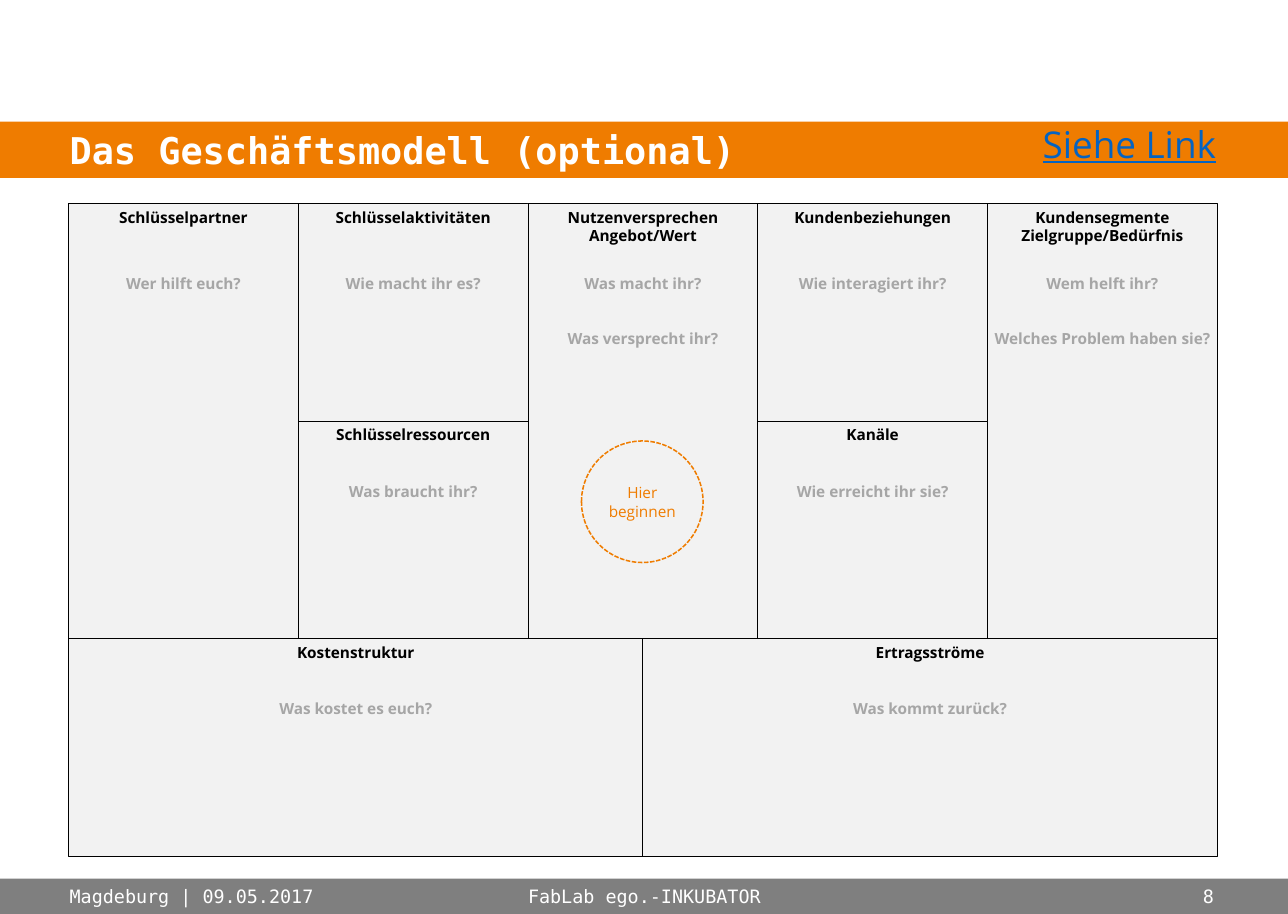
from dataclasses import dataclass

from pptx import Presentation
from pptx.dml.color import RGBColor
from pptx.enum.dml import MSO_LINE
from pptx.enum.shapes import MSO_SHAPE
from pptx.enum.text import MSO_ANCHOR, PP_ALIGN
from pptx.util import Inches, Pt

RECT, OVAL = MSO_SHAPE.RECTANGLE, MSO_SHAPE.OVAL
LEFT, MID, RIGHT = PP_ALIGN.LEFT, PP_ALIGN.CENTER, PP_ALIGN.RIGHT
TOP, CENTER = MSO_ANCHOR.TOP, MSO_ANCHOR.MIDDLE
DASH = MSO_LINE.SQUARE_DOT

MONO, SANS = "DejaVu Sans Mono", "Open Sans"
ORANGE, WHITE, BLACK, BLUE = "EF7C00", "FFFFFF", "000000", "0563C1"
PALE, SILVER, GREY = "F2F2F2", "A6A6A6", "7F7F7F"

WIDE, HIGH = 11.65, 8.27
EDGE, HEAD = 0.62, 1.84
COL, ROW = 2.078, 1.97
BAR, FOOT = 7.95, 0.32


@dataclass(frozen=True)
class Style:
    """Look of a text."""
    size: float
    color: str
    font: str = SANS
    bold: bool = False
    line: bool = False
    align: PP_ALIGN = MID
    anchor: MSO_ANCHOR = TOP
    pad: float = 0
    pitch: float | None = None
    gap: float = 0


@dataclass(frozen=True)
class Cell:
    """Field of the canvas, measured in columns and rows."""
    col: float
    row: int
    wide: float
    high: int
    name: str
    hint: str


@dataclass(frozen=True)
class Note:
    """Text in the footer bar."""
    left: float
    wide: float
    text: str
    align: PP_ALIGN


CELLS = [
    Cell(0, 0, 1, 2, "Schlüsselpartner", "Wer hilft euch?"),
    Cell(1, 0, 1, 1, "Schlüsselaktivitäten", "Wie macht ihr es?"),
    Cell(2, 0, 1, 2, "Nutzenversprechen\nAngebot/Wert",
         "Was macht ihr?\nWas versprecht ihr?"),
    Cell(3, 0, 1, 1, "Kundenbeziehungen", "Wie interagiert ihr?"),
    Cell(4, 0, 1, 2, "Kundensegmente\nZielgruppe/Bedürfnis",
         "Wem helft ihr?\nWelches Problem haben sie?"),
    Cell(1, 1, 1, 1, "Schlüsselressourcen", "Was braucht ihr?"),
    Cell(3, 1, 1, 1, "Kanäle", "Wie erreicht ihr sie?"),
    Cell(0, 2, 2.5, 1, "Kostenstruktur", "Was kostet es euch?"),
    Cell(2.5, 2, 2.5, 1, "Ertragsströme", "Was kommt zurück?"),
]
NOTES = [
    Note(0.63, 2.71, "Magdeburg | 09.05.2017", LEFT),
    Note(4.26, 3.14, "FabLab ego.-INKUBATOR", MID),
    Note(10.2, 0.78, "8", RIGHT),
]
NAME = Style(10, BLACK, bold=True, pad=0.04, pitch=12)
HINT = Style(10, SILVER, bold=True, pad=0.04, pitch=12, gap=24)
START = Style(10, ORANGE, anchor=CENTER, pitch=12)
TITLE = Style(24, WHITE, MONO, bold=True, align=LEFT, anchor=CENTER)
LINK = Style(24, BLUE, line=True)


def rgb(code: str) -> RGBColor:
    """Turn a hex string into a colour."""
    return RGBColor.from_string(code)


def write(shape, text: str, style: Style) -> None:
    """Set and format the text of a shape."""
    frame = shape.text_frame
    frame.text = text
    frame.word_wrap = True
    frame.vertical_anchor = style.anchor
    frame.margin_left = frame.margin_right = Inches(style.pad)
    frame.margin_top = frame.margin_bottom = Inches(style.pad)
    for rank, para in enumerate(frame.paragraphs):
        para.alignment = style.align
        if style.pitch:
            para.line_spacing = Pt(style.pitch)
        para.space_before = Pt(style.gap if rank else 0)
        for run in para.runs:
            font = run.font
            font.name, font.size = style.font, Pt(style.size)
            font.bold, font.underline = style.bold, style.line
            font.color.rgb = rgb(style.color)


def label(slide, left: float, top: float, wide: float, high: float,
          text: str, style: Style) -> None:
    """Add a text box."""
    box = slide.shapes.add_textbox(
        Inches(left), Inches(top), Inches(wide), Inches(high))
    write(box, text, style)


def block(slide, kind: MSO_SHAPE, left: float, top: float, wide: float,
          high: float, fill: str | None = None, edge: str | None = None,
          width: float = 0.5):
    """Add a flat shape with optional fill and outline."""
    shape = slide.shapes.add_shape(
        kind, Inches(left), Inches(top), Inches(wide), Inches(high))
    shape.shadow.inherit = False
    if fill:
        shape.fill.solid()
        shape.fill.fore_color.rgb = rgb(fill)
    else:
        shape.fill.background()
    if edge:
        shape.line.color.rgb = rgb(edge)
        shape.line.width = Pt(width)
    else:
        shape.line.fill.background()
    return shape


def field(slide, cell: Cell) -> None:
    """Draw one canvas field with its name and hint."""
    left, top = EDGE + cell.col * COL, HEAD + cell.row * ROW
    wide = cell.wide * COL
    box = block(slide, RECT, left, top, wide, cell.high * ROW, PALE, BLACK)
    write(box, cell.name, NAME)
    drop = 0.51 if cell.row else 0.6
    label(slide, left, top + drop, wide, 0.98, cell.hint, HINT)


def main() -> None:
    """Build the slide and save it."""
    deck = Presentation()
    deck.slide_width, deck.slide_height = Inches(WIDE), Inches(HIGH)
    slide = deck.slides.add_slide(deck.slide_layouts[5])

    title = slide.shapes.title
    title.left, title.top = Inches(0), Inches(1.1)
    title.width, title.height = Inches(WIDE), Inches(0.51)
    title.fill.solid()
    title.fill.fore_color.rgb = rgb(ORANGE)
    write(title, "Das Geschäftsmodell (optional)", TITLE)
    title.text_frame.margin_left = Inches(0.63)

    block(slide, RECT, 0, BAR, WIDE, FOOT, GREY)
    for note in NOTES:
        style = Style(12, WHITE, MONO, align=note.align, anchor=CENTER)
        label(slide, note.left, BAR, note.wide, FOOT, note.text, style)

    for cell in CELLS:
        field(slide, cell)

    ring = block(slide, OVAL, 5.26, 3.99, 1.1, 1.1, edge=ORANGE, width=1)
    ring.line.dash_style = DASH
    write(ring, "Hier beginnen", START)
    label(slide, 9.21, 1.1, 2.01, 0.51, "Siehe Link", LINK)
    deck.save("out.pptx")


if __name__ == "__main__":
    main()
